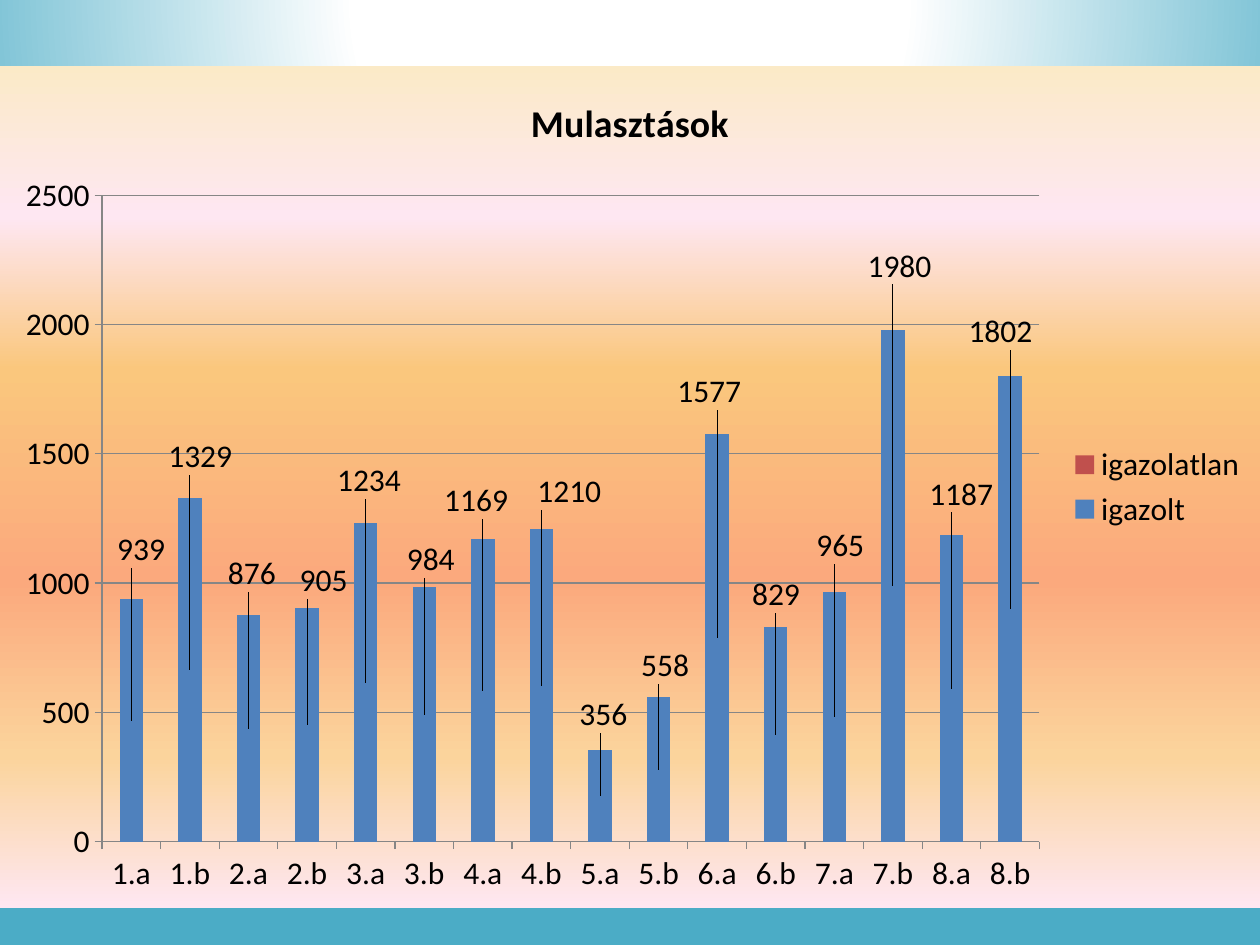
from dataclasses import dataclass

from lxml import etree
from pptx import Presentation
from pptx.chart.data import CategoryChartData
from pptx.dml.color import RGBColor
from pptx.enum.chart import XL_CHART_TYPE as ChartType, XL_LEGEND_POSITION as LegendPos
from pptx.enum.chart import XL_TICK_MARK as Tick
from pptx.oxml import parse_xml
from pptx.oxml.ns import nsdecls, qn
from pptx.util import Inches, Pt


@dataclass(frozen=True)
class Theme:
    """Colours and type sizes of the slide."""
    font: str = "Calibri"
    text_size: float = 18
    title_size: float = 21.6
    text: str = "000000"
    line: str = "868686"
    excused: str = "4F81BD"
    unexcused: str = "C0504D"
    backdrop: tuple = ((0, "FFFFFF"), (35, "FFFFFF"), (100, "4BACC6"))
    panel: tuple = ((0, "FBEAC7"), (18, "FEE7F2"), (36, "FAC77D"),
                    (61, "FBA97D"), (82, "FBD49C"), (100, "FEE7F2"))


@dataclass(frozen=True)
class Box:
    """A rectangle in inches."""
    left: float
    top: float
    width: float
    height: float


THEME = Theme()
CHART = Box(0, 0.52, 10, 6.69)
PLOT = Box(0.81, 1.55, 7.44, 5.13)
AXIS_MAX = 2500
# class, excused absences, centre of the value label in inches
ABSENCES = (
    ("1.a", 939, 1.12, 4.36), ("1.b", 1329, 1.59, 3.62),
    ("2.a", 876, 2.00, 4.55), ("2.b", 905, 2.57, 4.61),
    ("3.a", 1234, 2.93, 3.81), ("3.b", 984, 3.42, 4.44),
    ("4.a", 1169, 3.78, 3.97), ("4.b", 1210, 4.52, 3.90),
    ("5.a", 356, 4.79, 5.67), ("5.b", 558, 5.28, 5.28),
    ("6.a", 1577, 5.63, 3.11), ("6.b", 829, 6.16, 4.72),
    ("7.a", 965, 6.67, 4.33), ("7.b", 1980, 7.14, 2.11),
    ("8.a", 1187, 7.63, 3.92), ("8.b", 1802, 7.94, 2.63),
)


def gradient(stops, direction):
    """Return a gradient fill element."""
    gs = "".join(f'<a:gs pos="{pos * 1000}"><a:srgbClr val="{color}"/></a:gs>'
                 for pos, color in stops)
    return parse_xml(f'<a:gradFill {nsdecls("a")} rotWithShape="1">'
                     f'<a:gsLst>{gs}</a:gsLst>{direction}</a:gradFill>')


def layout(**values):
    """Return a manual chart layout element."""
    items = "".join(f'<c:{name} val="{value}"/>' for name, value in values.items())
    return parse_xml(f'<c:layout {nsdecls("c")}><c:manualLayout>{items}'
                     '</c:manualLayout></c:layout>')


def set_font(font, size=THEME.text_size, bold=False):
    """Apply the theme's type to a font."""
    font.name, font.size, font.bold = THEME.font, Pt(size), bold
    font.color.rgb = RGBColor.from_string(THEME.text)


def set_background(s):
    """Give the slide its circular gradient."""
    s.background.fill.solid()
    bg = s.element.find(".//" + qn("p:bgPr"))
    path = ('<a:path path="circle"><a:fillToRect l="50000" t="-80000" '
            'r="50000" b="180000"/></a:path>')
    bg.replace(bg[0], gradient(THEME.backdrop, path))


def style_frame(chart):
    """Set the chart's panel gradient and plot area."""
    sp_pr = parse_xml(f'<c:spPr {nsdecls("c", "a")}><a:ln><a:noFill/></a:ln></c:spPr>')
    sp_pr.insert(0, gradient(THEME.panel, '<a:lin ang="5400000" scaled="0"/>'))
    chart.element.find(qn("c:txPr")).addprevious(sp_pr)
    area = chart.element.find(".//" + qn("c:plotArea"))
    for old in area.findall(qn("c:layout")):
        area.remove(old)
    area.insert(0, layout(
        layoutTarget="inner", xMode="edge", yMode="edge",
        x=round((PLOT.left - CHART.left) / CHART.width, 4),
        y=round((PLOT.top - CHART.top) / CHART.height, 4),
        w=round(PLOT.width / CHART.width, 4),
        h=round(PLOT.height / CHART.height, 4)))


def style_axes(chart):
    """Set scale, ticks and lines of both axes."""
    value = chart.value_axis
    value.minimum_scale, value.maximum_scale, value.major_unit = 0, AXIS_MAX, 500
    value.has_major_gridlines = True
    for axis in (chart.category_axis, value):
        axis.major_tick_mark, axis.minor_tick_mark = Tick.OUTSIDE, Tick.NONE
        set_font(axis.tick_labels.font)
    for line in (chart.category_axis.format.line, value.format.line,
                 value.major_gridlines.format.line):
        line.color.rgb = RGBColor.from_string(THEME.line)
        line.width = Pt(0.75)


def place_labels(chart):
    """Move each value label from its bar's middle to its own centre."""
    series = chart.plots[0].series[0]
    series.data_labels.show_value = True
    set_font(series.data_labels.font)
    for i in range(len(ABSENCES)):
        set_font(series.points[i].data_label.font)
    step = PLOT.width / len(ABSENCES)
    labels = chart.element.iter(qn("c:dLbl"))
    for i, (label, (_, count, x, y)) in enumerate(zip(list(labels), ABSENCES)):
        bar_x = PLOT.left + step * (i + 0.5)
        bar_y = PLOT.top + PLOT.height * (1 - count / AXIS_MAX / 2)
        label[0].addnext(layout(x=round((x - bar_x) / CHART.width, 4),
                                y=round((y - bar_y) / CHART.height, 4)))


def add_absence_chart(s):
    """Add the stacked column chart of absences by class."""
    data = CategoryChartData()
    data.categories = [row[0] for row in ABSENCES]
    data.add_series("igazolt", [row[1] for row in ABSENCES])
    data.add_series("igazolatlan", [None] * len(ABSENCES))
    box = [Inches(n) for n in (CHART.left, CHART.top, CHART.width, CHART.height)]
    chart = s.shapes.add_chart(ChartType.COLUMN_STACKED, *box, data).chart
    set_font(chart.font)
    chart.has_title = True
    r = chart.chart_title.text_frame.paragraphs[0].add_run()
    r.text = "Mulasztások"
    set_font(r.font, THEME.title_size, True)
    etree.SubElement(chart.chart_title.element, qn("c:overlay")).set("val", "0")
    chart.has_legend = True
    chart.legend.position, chart.legend.include_in_layout = LegendPos.RIGHT, False
    set_font(chart.legend.font)
    plot = chart.plots[0]
    plot.gap_width, plot.overlap, plot.vary_by_categories = 150, 100, False
    for series, color in zip(plot.series, (THEME.excused, THEME.unexcused)):
        series.format.fill.solid()
        series.format.fill.fore_color.rgb = RGBColor.from_string(color)
    style_frame(chart)
    style_axes(chart)
    place_labels(chart)


def main():
    """Build and save the slide."""
    prs = Presentation()
    prs.slide_width, prs.slide_height = Inches(10), Inches(7.5)
    s = prs.slides.add_slide(prs.slide_layouts[6])
    set_background(s)
    add_absence_chart(s)
    prs.save("out.pptx")


if __name__ == "__main__":
    main()
